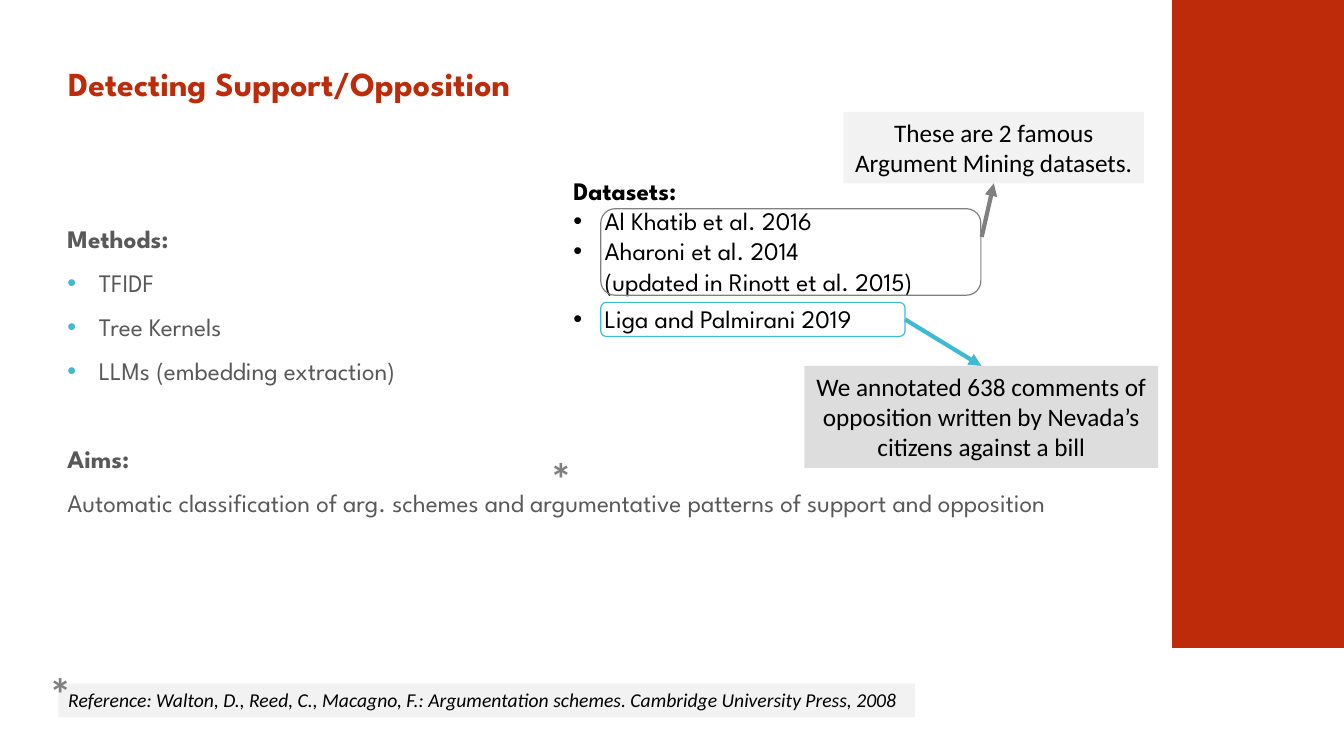
from dataclasses import dataclass
from typing import Optional

from lxml import etree
from pptx import Presentation
from pptx import util as u
from pptx.dml.color import RGBColor
from pptx.enum import shapes, text
from pptx.oxml import ns

RED, TEAL, GRAY = "BD2B0B", "40BAD2", "808080"
BLACK, DARK, PALE = "000000", "595959", "F2F2F2"
SPARTAN, CALIBRI = "League Spartan", "Calibri"
RECT, ROUND = shapes.MSO_SHAPE.RECTANGLE, shapes.MSO_SHAPE.ROUNDED_RECTANGLE


@dataclass
class Box:
    left: float
    top: float
    width: float
    height: float
    fill: Optional[str] = None
    line: Optional[str] = None

    def area(self) -> list:
        return [u.Cm(n) for n in (self.left, self.top, self.width, self.height)]


@dataclass
class Para:
    words: str
    bold: bool = False
    dot: Optional[str] = None
    before: float = 0


def paint(code: str) -> RGBColor:
    return RGBColor.from_string(code)


def draw(page, box: Box, kind=RECT):
    shape = page.shapes.add_shape(kind, *box.area())
    shape.shadow.inherit = False
    if box.fill:
        shape.fill.solid()
        shape.fill.fore_color.rgb = paint(box.fill)
    else:
        shape.fill.background()
    if box.line:
        shape.line.color.rgb = paint(box.line)
        shape.line.width = u.Pt(0.85)
    else:
        shape.line.fill.background()
    return shape


def add_dot(par, hue: str) -> None:
    props = par._p.get_or_add_pPr()
    props.set("marL", str(u.Cm(0.79)))
    props.set("indent", str(-u.Cm(0.79)))
    tint = etree.SubElement(props, ns.qn("a:buClr"))
    etree.SubElement(tint, ns.qn("a:srgbClr")).set("val", hue)
    etree.SubElement(props, ns.qn("a:buFont")).set("typeface", "Arial")
    etree.SubElement(props, ns.qn("a:buChar")).set("char", "•")


def write(shape, paras: list, *, size=18, font=SPARTAN, color=BLACK, italic=False,
          center=False, space=None, wrap=False, grow=True, middle=False):
    frame = shape.text_frame
    frame.word_wrap = wrap
    fit = text.MSO_AUTO_SIZE
    frame.auto_size = fit.SHAPE_TO_FIT_TEXT if grow else fit.NONE
    anchor = text.MSO_ANCHOR
    frame.vertical_anchor = anchor.MIDDLE if middle else anchor.TOP
    for i, item in enumerate(paras):
        par = frame.add_paragraph() if i else frame.paragraphs[0]
        par.text = item.words
        par.alignment = text.PP_ALIGN.CENTER if center else text.PP_ALIGN.LEFT
        if item.dot:
            add_dot(par, item.dot)
        if space:
            par.line_spacing = space
        if item.before:
            par.space_before = u.Pt(item.before)
        for run in par.runs:
            face = run.font
            face.size, face.name = u.Pt(size), font
            face.bold, face.italic = item.bold, italic
            face.color.rgb = paint(color)
    return shape


def label(page, box: Box, paras: list, **form):
    return write(page.shapes.add_textbox(*box.area()), paras, **form)


def arrow(page, start: tuple, end: tuple, color: str):
    ends = [u.Cm(n) for n in start + end]
    link = page.shapes.add_connector(shapes.MSO_CONNECTOR.STRAIGHT, *ends)
    link.line.color.rgb = paint(color)
    link.line.width = u.Pt(3)
    etree.SubElement(link.line._get_or_add_ln(), ns.qn("a:tailEnd")).set("type", "triangle")
    etree.SubElement(link._element.spPr, ns.qn("a:effectLst"))
    return link


def main() -> None:
    deck = Presentation()
    deck.slide_width, deck.slide_height = u.Cm(33.87), u.Cm(19.05)
    page = deck.slides.add_slide(deck.slide_layouts[6])

    label(page, Box(1.47, 1.32, 17.04, 1.8),
          [Para("Detecting Support/Opposition", bold=True)],
          size=24, color=RED, space=u.Pt(22), wrap=True, grow=False, middle=True)

    tools = ["TFIDF", "Tree Kernels", "LLMs (embedding extraction)"]
    label(page, Box(1.45, 4.29, 27.38, 10.19), [
        Para("Methods:", bold=True),
        *[Para(tool, dot=TEAL, before=12) for tool in tools],
        Para("Aims:", bold=True, before=43.4),
        Para("Automatic classification of arg. schemes and argumentative "
             "patterns of support and opposition", before=12),
    ], color=DARK, space=0.9, wrap=True, grow=False, middle=True)

    label(page, Box(14.2, 4.29, 10.54, 3.33), [
        Para("Datasets:", bold=True),
        Para("Al Khatib et al. 2016", dot=BLACK),
        Para("Aharoni et al. 2014\n(updated in Rinott et al. 2015)", dot=BLACK),
    ])

    famous = write(draw(page, Box(21.26, 2.82, 7.57, 1.8, fill=PALE)),
                   [Para("These are 2 famous"), Para("Argument Mining datasets.")],
                   font=CALIBRI, center=True)
    draw(page, Box(15.14, 5.26, 9.58, 2.18, line=GRAY), ROUND)
    arrow(page, (24.74, 5.97), (25.04, 4.62), GRAY).end_connect(famous, 2)

    draw(page, Box(29.54, 0, 4.33, 16.33, fill=RED))
    write(draw(page, Box(1.47, 17.22, 21.59, 0.86, fill=PALE)),
          [Para("Reference: Walton, D., Reed, C., Macagno, F.: Argumentation "
                "schemes. Cambridge University Press, 2008")],
          size=14, font=CALIBRI, italic=True)
    for left, top in ((0.99, 16.64), (13.61, 11.23)):
        label(page, Box(left, top, 1.09, 1.63), [Para("*", bold=True)],
              size=32, font=CALIBRI, color=GRAY)

    ours = draw(page, Box(15.14, 7.62, 7.67, 0.86, line=TEAL), ROUND)
    lines = ["We annotated 638 comments of", "opposition written by Nevada’s",
             "citizens against a bill"]
    note = write(draw(page, Box(20.27, 9.22, 8.92, 2.57, fill="DDDDDD")),
                 [Para(line) for line in lines], font=CALIBRI, center=True)
    link = arrow(page, (22.81, 8.05), (24.73, 9.22), TEAL)
    link.begin_connect(ours, 3)
    link.end_connect(note, 0)
    label(page, Box(14.2, 7.52, 10.03, 1.02),
          [Para("Liga and Palmirani 2019", dot=BLACK)], wrap=True)

    deck.save("out.pptx")


if __name__ == "__main__":
    main()
